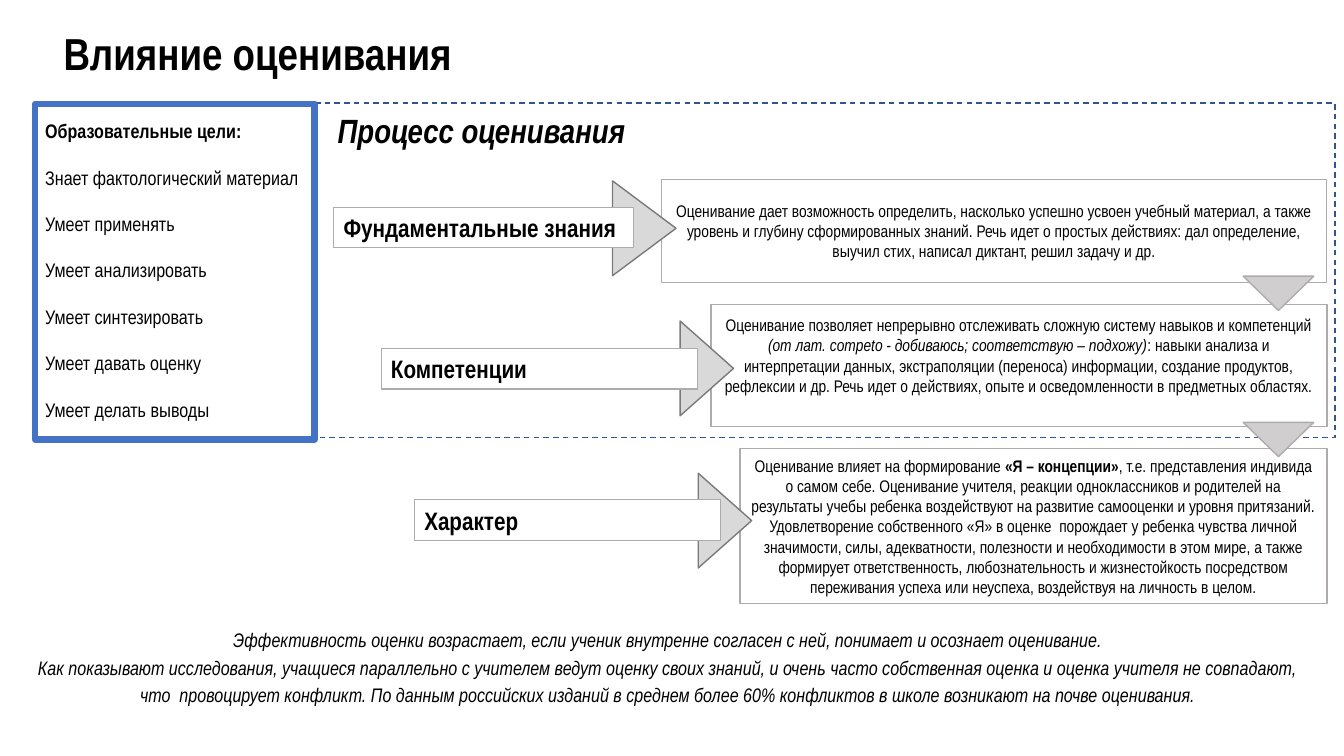
from pptx import Presentation
from pptx.dml.color import RGBColor
from pptx.enum.dml import MSO_LINE
from pptx.enum.shapes import MSO_SHAPE
from pptx.enum.text import MSO_ANCHOR, MSO_AUTO_SIZE, PP_ALIGN
from pptx.util import Inches, Pt

RECTANGLE, TRIANGLE = MSO_SHAPE.RECTANGLE, MSO_SHAPE.ISOSCELES_TRIANGLE
DASH = MSO_LINE.DASH
TOP, MIDDLE = MSO_ANCHOR.TOP, MSO_ANCHOR.MIDDLE
LEFT, CENTER = PP_ALIGN.LEFT, PP_ALIGN.CENTER
NO_AUTOSIZE = MSO_AUTO_SIZE.NONE
TITLE_ONLY = 5

WHITE, BLACK = "FFFFFF", "000000"
BLUE, NAVY = "4472C4", "325491"
EDGE, ARROW_FILL, ARROW_EDGE, DROP_FILL = "AFABAB", "D9D9D9", "7A7A7A", "D0CECE"


def color(value):
    return RGBColor.from_string(value)


class SlideBuilder:
    font = "Arial Narrow"

    def __init__(self, deck):
        self.page = deck.slides.add_slide(deck.slide_layouts[TITLE_ONLY])

    def fill_text(self, box, paragraphs, size, anchor=TOP, wrap=True, bold=False,
                  italic=False, **spacing):
        """Each paragraph is a list of (text, font overrides) pairs."""
        frame = box.text_frame
        frame.auto_size = NO_AUTOSIZE
        frame.word_wrap = wrap
        frame.vertical_anchor = anchor
        for number, spans in enumerate(paragraphs):
            para = frame.paragraphs[0] if number == 0 else frame.add_paragraph()
            for name, value in {"alignment": LEFT, **spacing}.items():
                setattr(para, name, value)
            for text, changes in spans:
                span = para.add_run()
                span.text = text
                style = {"name": self.font, "size": Pt(size), "bold": bold,
                         "italic": italic, **changes}
                for name, value in style.items():
                    setattr(span.font, name, value)
                span.font.color.rgb = color(BLACK)

    def title(self, text, place, size):
        box = self.page.shapes.title
        for name, value in zip(("left", "top", "width", "height"), place):
            setattr(box, name, Inches(value))
        self.fill_text(box, [[(text, {})]], size, MIDDLE, bold=True, line_spacing=0.9)

    def shape(self, kind, place, edge, width=1, fill=None, dash=None, rotation=0):
        box = self.page.shapes.add_shape(kind, *map(Inches, place))
        box.shadow.inherit = False
        box.rotation = rotation
        if fill:
            box.fill.solid()
            box.fill.fore_color.rgb = color(fill)
        else:
            box.fill.background()
        box.line.color.rgb = color(edge)
        box.line.width = Pt(width)
        if dash:
            box.line.dash_style = dash
        return box

    def text(self, place, paragraphs, size, **style):
        box = self.page.shapes.add_textbox(*map(Inches, place))
        self.fill_text(box, paragraphs, size, **style)

    def stage(self, label, label_place, arrow_place, note_place, spans, bottom):
        note = self.shape(RECTANGLE, note_place, EDGE, fill=WHITE)
        note.text_frame.margin_bottom = Inches(bottom)
        self.fill_text(note, [spans], 12, MIDDLE, alignment=CENTER)
        self.shape(TRIANGLE, arrow_place, ARROW_EDGE, fill=ARROW_FILL, rotation=90)
        tag = self.shape(RECTANGLE, label_place, EDGE, 0.75, WHITE)
        self.fill_text(tag, [[(label, {})]], 18, bold=True)


GOALS = [
    "Знает фактологический материал",
    "Умеет применять",
    "Умеет анализировать",
    "Умеет синтезировать",
    "Умеет давать оценку",
    "Умеет делать выводы",
]

# Label, label place, arrow place, note place, note text, bottom margin
STAGES = [
    ("Фундаментальные знания", (3.31, 2.06, 2.97, 0.4), (5.92, 1.95, 0.94, 0.63),
     (6.56, 1.78, 6.6, 1.02),
     [("Оценивание дает возможность определить, насколько успешно усвоен учебный "
       "материал, а также уровень и глубину сформированных знаний. Речь идет о "
       "простых действиях: дал определение, выучил стих, написал диктант, решил "
       "задачу и др.", {})], 0.05),
    ("Компетенции", (3.78, 3.46, 3.14, 0.4), (6.54, 3.39, 0.94, 0.53),
     (7.05, 3.02, 6.11, 1.21),
     [("Оценивание позволяет непрерывно отслеживать сложную систему навыков и "
       "компетенций ", {}),
      ("(от лат. competo - добиваюсь; соответствую – подхожу)", {"italic": True}),
      (": навыки анализа и интерпретации данных, экстраполяции (переноса) "
       "информации, создание продуктов, рефлексии и др. Речь идет о действиях, "
       "опыте и осведомленности в предметных областях.", {})], 0.25),
    ("Характер", (4.11, 4.96, 3.04, 0.4), (6.72, 4.9, 0.94, 0.53),
     (7.34, 4.45, 5.82, 1.54),
     [("Оценивание влияет на формирование ", {}),
      ("«Я – концепции»", {"bold": True}),
      (", т.е. представления индивида о самом себе. Оценивание учителя, реакции "
       "одноклассников и родителей на результаты учебы ребенка воздействуют на "
       "развитие самооценки и уровня притязаний. Удовлетворение собственного «Я» "
       "в оценке  порождает у ребенка чувства личной значимости, силы, "
       "адекватности, полезности и необходимости в этом мире, а также формирует "
       "ответственность, любознательность и жизнестойкость посредством "
       "переживания успеха или неуспеха, воздействуя на личность в целом.", {})],
     0.05),
]

CONCLUSIONS = [
    "Эффективность оценки возрастает, если ученик внутренне согласен с ней, "
    "понимает и осознает оценивание.",
    "Как показывают исследования, учащиеся параллельно с учителем ведут оценку "
    "своих знаний, и очень часто собственная оценка и оценка учителя не "
    "совпадают, что  провоцирует конфликт. По данным российских изданий в среднем "
    "более 60% конфликтов в школе возникают на почве оценивания.",
]


def main():
    deck = Presentation()
    deck.slide_width, deck.slide_height = Inches(13.33), Inches(7.5)
    slide = SlideBuilder(deck)

    # Title and dashed frame
    slide.title("Влияние оценивания", (0.53, 0.21, 12.11, 0.7), 32)
    slide.shape(RECTANGLE, (0.35, 1.02, 12.89, 3.32), NAVY, dash=DASH)

    # Educational goals
    goals = slide.shape(RECTANGLE, (0.35, 1.03, 2.77, 3.33), BLUE, 4.5)
    lines = [[("Образовательные цели:", {"bold": True})]]
    lines += [[(goal, {})] for goal in GOALS]
    slide.fill_text(goals, lines, 14, MIDDLE, line_spacing=0.9,
                    space_before=Pt(12), space_after=Pt(6))

    # Assessment stages, linked by downward triangles
    for stage in STAGES:
        slide.stage(*stage)
    for top in (2.74, 4.19):
        slide.shape(TRIANGLE, (12.33, top, 0.7, 0.34), EDGE, fill=DROP_FILL,
                    rotation=180)

    # Conclusions and process heading
    slide.text((0.22, 6.15, 12.81, 0.91), [[(line, {})] for line in CONCLUSIONS],
               14, italic=True, alignment=CENTER, line_spacing=1.15)
    slide.text((3.25, 1.04, 3.18, 0.5), [[("Процесс оценивания", {})]], 24,
               wrap=False, bold=True, italic=True)

    deck.save("out.pptx")


if __name__ == "__main__":
    main()
